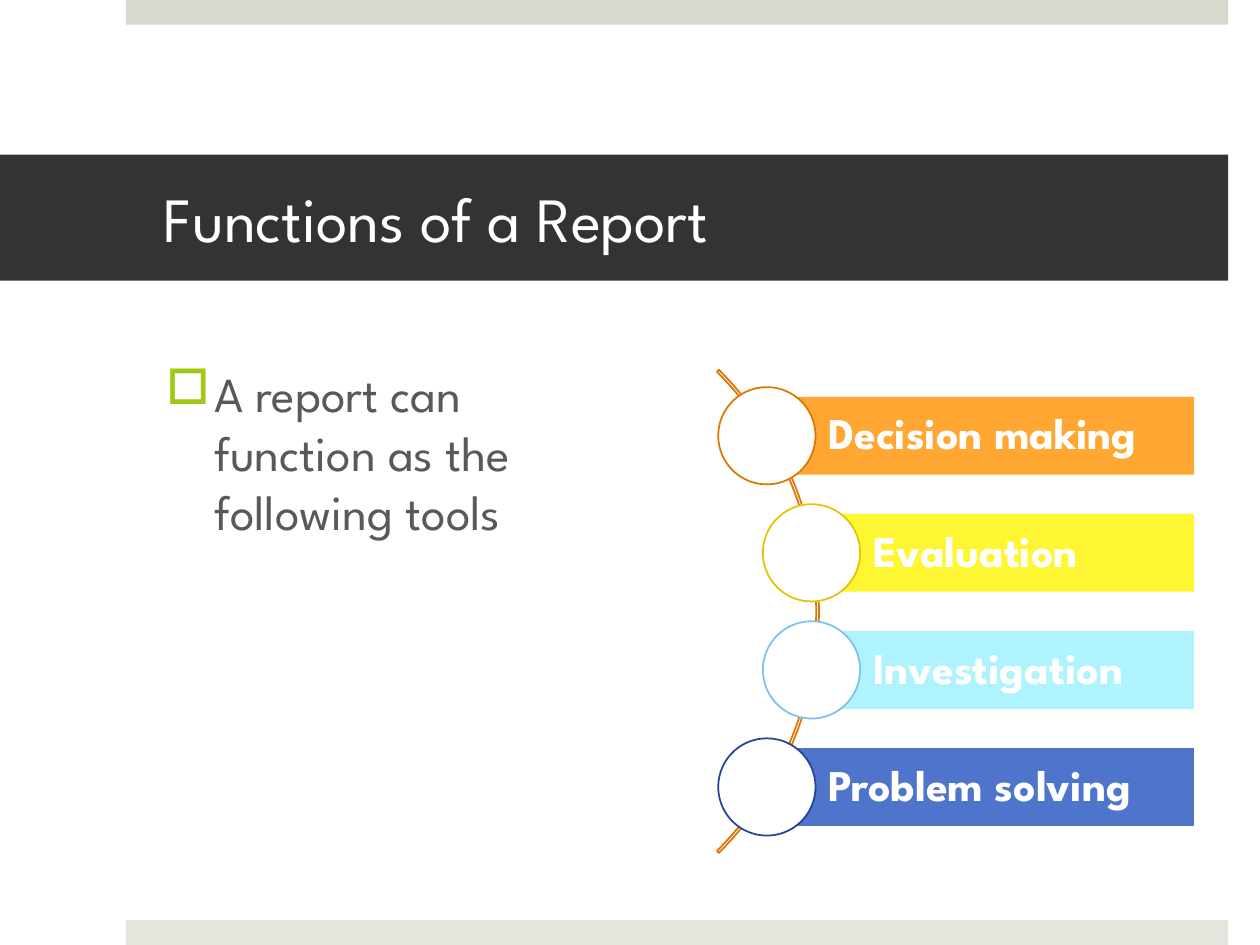
from dataclasses import dataclass

import pptx
import pptx.dml.color
import pptx.enum.shapes
import pptx.enum.text
import pptx.oxml.ns
import pptx.util
from lxml import etree

Cm = pptx.util.Cm
Pt = pptx.util.Pt
RGBColor = pptx.dml.color.RGBColor
SHAPE = pptx.enum.shapes.MSO_SHAPE
ALIGN = pptx.enum.text.PP_ALIGN
ANCHOR = pptx.enum.text.MSO_ANCHOR

FACE = "League Spartan"
WHITE = RGBColor(0xFF, 0xFF, 0xFF)
DARK = RGBColor(0x33, 0x33, 0x33)
GREY = RGBColor(0x59, 0x59, 0x59)
SAGE = RGBColor(0xD6, 0xD9, 0xCD)
MIST = RGBColor(0xE4, 0xE6, 0xDE)
LIME = RGBColor(0xA2, 0xC8, 0x16)
RUST = RGBColor(0xE0, 0x76, 0x02)
ORANGE = RGBColor(0xFF, 0xA7, 0x32)
GOLD = RGBColor(0xE4, 0xC4, 0x02)
YELLOW = RGBColor(0xFF, 0xF6, 0x33)
SKY = RGBColor(0x7D, 0xC1, 0xEF)
AQUA = RGBColor(0xAF, 0xF3, 0xFF)
NAVY = RGBColor(0x21, 0x44, 0x9B)
BLUE = RGBColor(0x4F, 0x74, 0xCC)

# Lengths in centimetres
TOP = 8.0
STEP = 2.36
RIGHT = 24.07
BAR = 1.57
DISC = 1.96
OUTER = 15.46
INNER = 16.36


@dataclass(frozen=True)
class Tool:
    name: str
    left: float
    fill: RGBColor
    edge: RGBColor


TOOLS = (
    Tool("Decision making", OUTER, ORANGE, RUST),
    Tool("Evaluation", INNER, YELLOW, GOLD),
    Tool("Investigation", INNER, AQUA, SKY),
    Tool("Problem solving", OUTER, BLUE, NAVY),
)


def add_form(slide, kind, left: float, top: float, width: float, height: float,
             fill: RGBColor | None = None, edge: RGBColor | None = None):
    """Add a flat preset shape, with no fill or no line where none is given."""
    form = slide.shapes.add_shape(kind, Cm(left), Cm(top), Cm(width), Cm(height))
    form.shadow.inherit = False
    if fill is None:
        form.fill.background()
    else:
        form.fill.solid()
        form.fill.fore_color.rgb = fill
    if edge is None:
        form.line.fill.background()
    else:
        form.line.color.rgb = edge
        form.line.width = Pt(1)
    return form


def set_font(para, size: float, color: RGBColor, bold: bool = False) -> None:
    para.font.name = FACE
    para.font.size = Pt(size)
    para.font.bold = bold
    para.font.color.rgb = color


def add_label(form, text: str, size: float, left: float, side: float,
              bold: bool = False):
    """Write one left-aligned, vertically centred line into a shape."""
    frame = form.text_frame
    frame.word_wrap = True
    frame.vertical_anchor = ANCHOR.MIDDLE
    frame.margin_left, frame.margin_right = Cm(left), Cm(side)
    para = frame.paragraphs[0]
    para.text = text
    para.alignment = ALIGN.LEFT
    set_font(para, size, WHITE, bold)
    return para


def add_bullet(para, mark: str, color: RGBColor, indent: float) -> None:
    qn = pptx.oxml.ns.qn
    props = para._p.get_or_add_pPr()
    props.set("marL", str(Cm(indent)))
    props.set("indent", str(-Cm(indent)))
    tint = etree.SubElement(props, qn("a:buClr"))
    etree.SubElement(tint, qn("a:srgbClr"), val=str(color))
    etree.SubElement(props, qn("a:buChar"), char=mark)


def add_body(slide) -> None:
    box = slide.shapes.add_textbox(Cm(3.1), Cm(7.21), Cm(9.9), Cm(10.24))
    box.text_frame.word_wrap = True
    para = box.text_frame.paragraphs[0]
    para.text = "A report can function as the following tools"
    para.space_before = Pt(20)
    add_bullet(para, "□", LIME, 0.97)
    set_font(para, 28, GREY)


def add_arc(slide) -> None:
    arc = add_form(slide, SHAPE.BLOCK_ARC, 2.74, 5.44, 13.77, 13.77, edge=RUST)
    for num, value in enumerate((189, 27, 0.004)):
        arc.adjustments[num] = value


def add_tool(slide, tool: Tool, top: float) -> None:
    bar = add_form(slide, SHAPE.RECTANGLE, tool.left, top,
                   RIGHT - tool.left, BAR, tool.fill)
    para = add_label(bar, tool.name, 25, 1.24, 0.18, bold=True)
    para.line_spacing = 0.9
    add_form(slide, SHAPE.OVAL, tool.left - DISC / 2, top + (BAR - DISC) / 2,
             DISC, DISC, WHITE, tool.edge)


def main() -> None:
    deck = pptx.Presentation()
    deck.slide_width, deck.slide_height = Cm(25.4), Cm(19.05)
    slide = deck.slides.add_slide(deck.slide_layouts[6])

    add_form(slide, SHAPE.RECTANGLE, 2.54, 0, 22.22, 0.5, SAGE)
    add_form(slide, SHAPE.RECTANGLE, 2.54, 18.55, 22.22, 0.5, MIST)
    title = add_form(slide, SHAPE.RECTANGLE, 0, 3.12, 24.76, 2.54, DARK)
    add_label(title, "Functions of a Report", 36, 3.3, 0.76)
    add_body(slide)

    add_arc(slide)
    for num, tool in enumerate(TOOLS):
        add_tool(slide, tool, TOP + num * STEP)
    deck.save("out.pptx")


if __name__ == "__main__":
    main()
